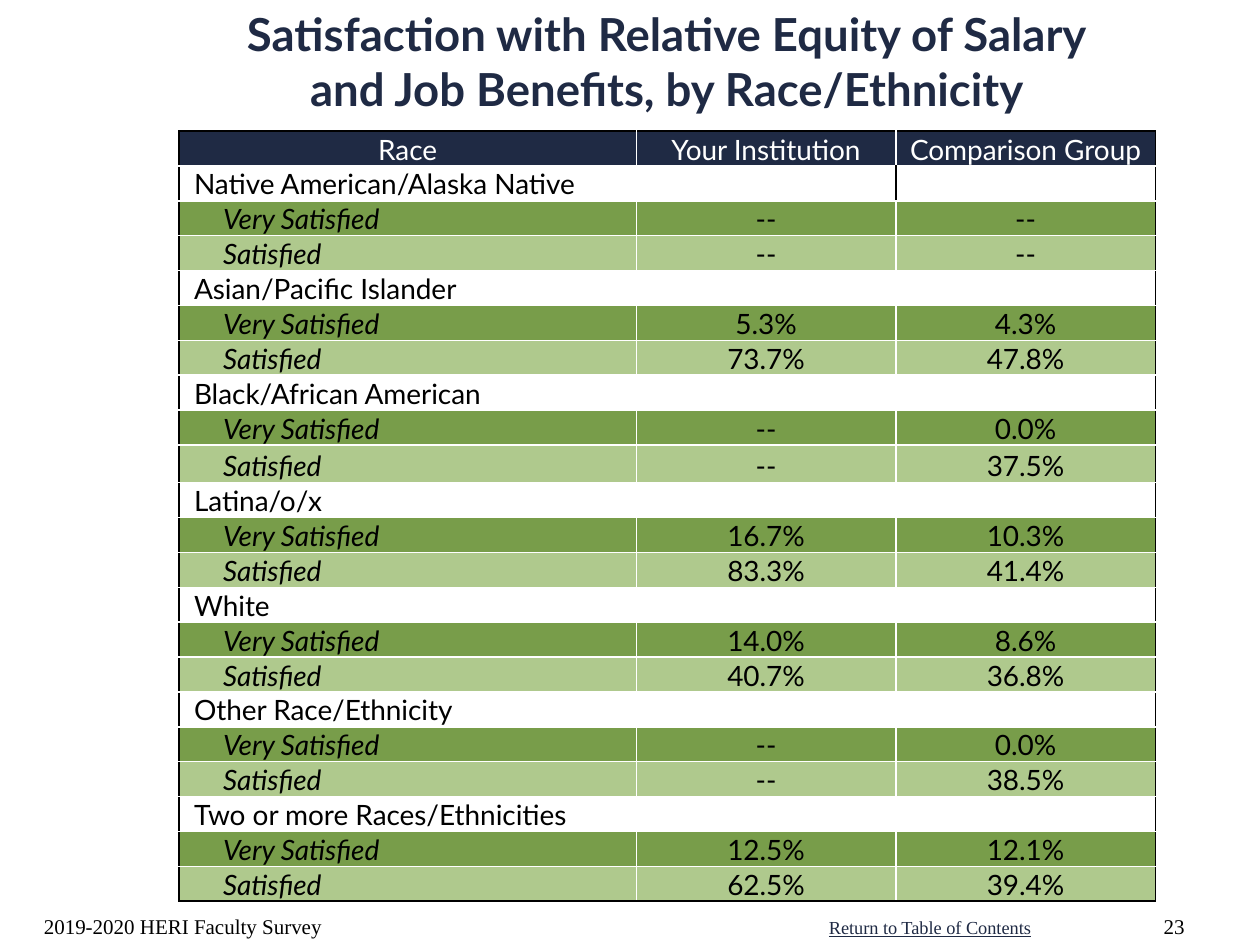
from typing import NamedTuple

from lxml.etree import SubElement
from pptx import Presentation
from pptx.dml.color import RGBColor
from pptx.enum.text import MSO_ANCHOR as Anchor, PP_ALIGN as Align
from pptx.oxml import parse_xml
from pptx.oxml.ns import nsdecls, qn
from pptx.util import Inches, Pt

NAVY, BLACK, WHITE = "1F2A44", "000000", "FFFFFF"
DARK_GREEN, LIGHT_GREEN = "789D4A", "AFC98D"
SANS, SERIF = "Lato", "Times New Roman"
TABLE_SIZE = 16


class Group(NamedTuple):
    race: str
    very_satisfied: tuple[str, str]
    satisfied: tuple[str, str]


class Row(NamedTuple):
    texts: tuple[str, str, str]
    fill: str
    color: str = BLACK
    indent: float = 0.01
    italic: bool = False
    label_align: Align = Align.LEFT


GROUPS = [
    Group("Native American/Alaska Native", ("--", "--"), ("--", "--")),
    Group("Asian/Pacific Islander", ("5.3%", "4.3%"), ("73.7%", "47.8%")),
    Group("Black/African American", ("--", "0.0%"), ("--", "37.5%")),
    Group("Latina/o/x", ("16.7%", "10.3%"), ("83.3%", "41.4%")),
    Group("White", ("14.0%", "8.6%"), ("40.7%", "36.8%")),
    Group("Other Race/Ethnicity", ("--", "0.0%"), ("--", "38.5%")),
    Group("Two or more Races/Ethnicities", ("12.5%", "12.1%"), ("62.5%", "39.4%")),
]
TALL_ROW = 9


def rgb(value: str) -> RGBColor:
    return RGBColor.from_string(value)


def write(frame, text: str, *, size: float, font: str, color: str, bold=False,
          italic=False, underline=False, align=Align.LEFT) -> None:
    """Write each line of the text as a formatted paragraph."""
    for index, line in enumerate(text.split("\n")):
        paragraph = frame.add_paragraph() if index else frame.paragraphs[0]
        paragraph.alignment = align
        if not line:
            SubElement(paragraph._p, qn("a:endParaRPr"), sz=str(size * 100))
            continue
        run = paragraph.add_run()
        run.text = line
        run.font.size, run.font.name = Pt(size), font
        run.font.bold, run.font.italic = bold, italic
        run.font.underline = underline
        run.font.color.rgb = rgb(color)


def add_text(slide, text: str, left: float, top: float, width: float, height: float,
             *, anchor=Anchor.TOP, wrap=True, **style) -> None:
    box = slide.shapes.add_textbox(Inches(left), Inches(top), Inches(width), Inches(height))
    box.text_frame.word_wrap = wrap
    box.text_frame.vertical_anchor = anchor
    write(box.text_frame, text, **style)


def set_borders(cell, **colors: str) -> None:
    """Draw the four 1 pt borders; the lines must come before the fill."""
    properties = cell._tc.get_or_add_tcPr()
    for index, side in enumerate("LRTB"):
        properties.insert(index, parse_xml(
            f'<a:ln{side} {nsdecls("a")} w="12700"><a:solidFill>'
            f'<a:srgbClr val="{colors[side]}"/></a:solidFill></a:ln{side}>'))


def table_rows() -> list[Row]:
    rows = [Row(("Race", "Your Institution", "Comparison Group"), NAVY, WHITE,
                label_align=Align.CENTER)]
    for group in GROUPS:
        rows += [
            Row((group.race, "", ""), WHITE, indent=0.12),
            Row(("Very Satisfied", *group.very_satisfied), DARK_GREEN,
                indent=0.35, italic=True),
            Row(("Satisfied", *group.satisfied), LIGHT_GREEN,
                indent=0.35, italic=True),
        ]
    return rows


def add_satisfaction_table(slide, rows: list[Row]) -> None:
    widths = [3.63, 2.06, 2.06]
    last_row, last_column = len(rows) - 1, len(widths) - 1
    table = slide.shapes.add_table(len(rows), len(widths), Inches(1.42), Inches(1.04),
                                   Inches(sum(widths)), Inches(6.08)).table
    table.first_row = table.horz_banding = False
    for column, width in zip(table.columns, widths):
        column.width = Inches(width)

    for r, row in enumerate(rows):
        table.rows[r].height = Inches(0.3 if r == TALL_ROW else (6.08 - 0.3) / last_row)
        for c, text in enumerate(row.texts):
            cell = table.cell(r, c)
            cell.margin_left = Inches(0.01 if c else row.indent)
            cell.margin_right = cell.margin_top = Inches(0.01)
            cell.margin_bottom = 0
            cell.vertical_anchor = Anchor.BOTTOM
            cell.fill.solid()
            cell.fill.fore_color.rgb = rgb(row.fill)
            write(cell.text_frame, text, size=TABLE_SIZE, font=SANS, color=row.color,
                  italic=row.italic and c == 0,
                  align=Align.CENTER if c else row.label_align)
            # The first group's label spans two columns and ends in a black line
            spanned = r == 1
            set_borders(cell,
                        L=BLACK if c == 0 or (spanned and c == last_column) else WHITE,
                        R=BLACK if c == last_column or spanned else WHITE,
                        T=BLACK if r == 0 else WHITE,
                        B=BLACK if r == last_row else WHITE)
    table.cell(1, 0).merge(table.cell(1, 1))


def main() -> None:
    presentation = Presentation()
    presentation.slide_width, presentation.slide_height = Inches(10), Inches(7.5)
    slide = presentation.slides.add_slide(presentation.slide_layouts[6])

    # Footer
    add_text(slide, "Return to Table of Contents", 6.48, 7.22, 1.82, 0.28, wrap=False,
             size=10.5, font=SERIF, color=NAVY, underline=True)
    footer = dict(anchor=Anchor.BOTTOM, size=12, font=SERIF, color=BLACK)
    add_text(slide, "2019-2020 HERI Faculty Survey", 0.25, 7, 3.17, 0.5, **footer)
    add_text(slide, "23", 9, 7, 0.5, 0.5, align=Align.RIGHT, **footer)

    # Table
    add_satisfaction_table(slide, table_rows())

    # Title
    add_text(slide, "Satisfaction with Relative Equity of Salary\n"
             "and Job Benefits, by Race/Ethnicity", 0.92, 0, 8.75, 0.98,
             size=26, font=SANS, color=NAVY, bold=True, align=Align.CENTER)

    presentation.save("out.pptx")


if __name__ == "__main__":
    main()
